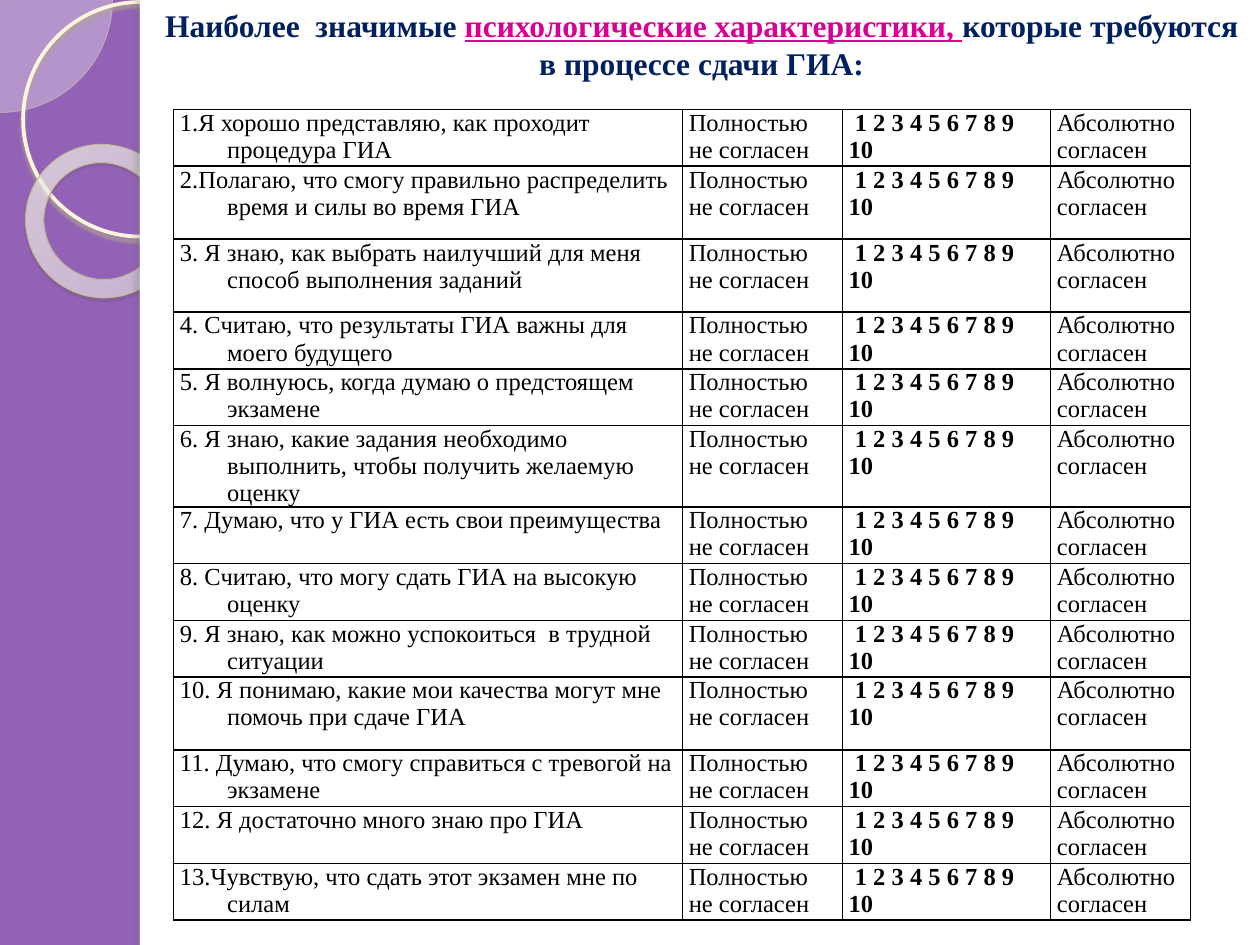
from lxml import etree
from pptx import Presentation
from pptx.dml.color import RGBColor
from pptx.enum import shapes, text
from pptx.oxml import parse_xml
from pptx.oxml.ns import qn
from pptx.util import Pt

NS = 'xmlns:a="http://schemas.openxmlformats.org/drawingml/2006/main"'


def paint(fill, colour):
    fill.solid()
    fill.fore_color.rgb = RGBColor.from_string(colour)


def add_part(kind, frame, fill=None, line=None, shadow=None):
    part = page.shapes.add_shape(kind, *map(Pt, frame))
    if fill:
        paint(part.fill, fill)
    else:
        part.fill.background()
    if line:
        paint(part.line.fill, line[0])
        part.line.width = Pt(line[1])
    else:
        part.line.fill.background()
    part.shadow.inherit = False
    if shadow:
        colour, alpha, blur, distance, angle = shadow
        part.element.spPr.find(qn("a:effectLst")).append(parse_xml(
            f'<a:outerShdw {NS} blurRad="{Pt(blur)}" dist="{Pt(distance)}" '
            f'dir="{angle * 60000}" algn="tl" rotWithShape="0"><a:srgbClr val="{colour}">'
            f'<a:alpha val="{alpha * 1000}"/></a:srgbClr></a:outerShdw>'))
    return part


deck = Presentation()
deck.slide_width, deck.slide_height = Pt(720), Pt(540)
page = deck.slides.add_slide(deck.slide_layouts[5])
paint(page.background.fill, "9262B7")
SHAPE = shapes.MSO_SHAPE

# Quarter disc in the corner
disc = add_part(SHAPE.PIE, (-64.3, -64.3, 128.6, 128.6), "FEFAF4", ("D3C39F", 0.25))
disc.adjustments[0], disc.adjustments[1] = 0, 54.02
tint = disc.element.spPr.find(qn("a:solidFill"))[0]
etree.SubElement(tint, qn("a:alpha")).set("val", "33000")

# Cream circle
add_part(SHAPE.OVAL, (13.2, 1.2, 134, 134), None, ("FFF5DE", 2.15),
         ("B0A68F", 85, 2, 2, 90))

# Translucent ring
ring = add_part(SHAPE.DONUT, (14.4, 82.8, 88.6, 87.1), "FFFCF6", ("C7B893", 0.58),
                ("5A5444", 35, 1, 1.2, 75))
ring.adjustments[0] = 0.12
ring.rotation = 38.6
stops = "".join(
    f'<a:gs pos="{place * 1000}"><a:srgbClr val="{colour}">'
    f'<a:alpha val="{alpha * 1000}"/></a:srgbClr></a:gs>'
    for place, colour, alpha in [(0, "FFFCF6", 70), (70, "FFFEFB", 55), (100, "F0D28E", 60)])
ring_properties = ring.element.spPr
ring_properties.replace(ring_properties.find(qn("a:solidFill")), parse_xml(
    f'<a:gradFill {NS}><a:gsLst>{stops}</a:gsLst><a:path path="circle">'
    '<a:fillToRect l="-408000" t="-50000" r="508000" b="150000"/></a:path></a:gradFill>'))

# White sheet and its shaded left edge
add_part(SHAPE.RECTANGLE, (80, 0, 640, 540), "FFFFFF")
add_part(SHAPE.RECTANGLE, (80, 0, 5.8, 540), "FFFFFF", None, ("736F63", 25, 3, 3, 180))

# Questionnaire
statements = [
    "1.Я хорошо представляю, как проходит процедура ГИА",
    "2.Полагаю, что смогу правильно распределить время и силы во время ГИА",
    "3. Я знаю, как выбрать наилучший для меня способ выполнения заданий",
    "4. Считаю, что результаты ГИА важны для моего будущего",
    "5. Я волнуюсь, когда думаю о предстоящем экзамене",
    "6. Я знаю, какие задания необходимо выполнить, чтобы получить желаемую оценку",
    "7. Думаю, что у ГИА есть свои преимущества",
    "8. Считаю, что могу сдать ГИА на высокую оценку",
    "9. Я знаю, как можно успокоиться  в трудной ситуации",
    "10. Я понимаю, какие мои качества могут мне помочь при сдаче ГИА",
    "11. Думаю, что смогу справиться с тревогой на экзамене",
    "12. Я достаточно много знаю про ГИА",
    "13.Чувствую, что сдать этот экзамен мне по силам",
]
answers = ["Полностью не согласен", " 1 2 3 4 5 6 7 8 9 10", "Абсолютно согласен"]
widths = [290.8, 91.4, 119, 80]
tall_rows = {1, 2, 5, 9}
cell_format = {"margin_left": Pt(3.6), "margin_right": Pt(3.6),
               "margin_top": 0, "margin_bottom": 0}

table = page.shapes.add_table(len(statements), len(widths), Pt(99.2), Pt(62.6),
                              Pt(sum(widths)), Pt(463)).table
table.first_row = table.horz_banding = False
for column, width in zip(table.columns, widths):
    column.width = Pt(width)
for number, statement in enumerate(statements):
    table.rows[number].height = Pt(41.7 if number in tall_rows else 32.4)
    for place, wording in enumerate([statement] + answers):
        cell = table.cell(number, place)
        for name, value in cell_format.items():
            setattr(cell, name, value)
        para = cell.text_frame.paragraphs[0]
        span = para.add_run()
        span.text = wording
        font_format = {"name": "Times New Roman", "size": Pt(14), "bold": place == 2}
        for name, value in font_format.items():
            setattr(span.font, name, value)
        paint(span.font.fill, "000000")
        if place == 0:
            indent = para._p.get_or_add_pPr()
            indent.set("marL", str(Pt(27)))
            indent.set("indent", str(Pt(-27)))
            indent.append(parse_xml(
                f'<a:tabLst {NS}><a:tab pos="{Pt(36)}" algn="l"/></a:tabLst>'))
        cell.fill.background()
        for order, side in enumerate(["lnL", "lnR", "lnT", "lnB"]):
            cell._tc.get_or_add_tcPr().insert(order, parse_xml(
                f'<a:{side} {NS} w="{Pt(1)}"><a:solidFill><a:srgbClr val="000000"/>'
                f'</a:solidFill></a:{side}>'))

# Title, in front of everything
title = page.shapes.title
title_frame = {"left": Pt(82), "top": 0, "width": Pt(638), "height": Pt(94.3)}
for name, value in title_frame.items():
    setattr(title, name, value)
box = title.text_frame
box_format = {"word_wrap": True, "auto_size": text.MSO_AUTO_SIZE.NONE,
              "vertical_anchor": text.MSO_ANCHOR.TOP}
for name, value in box_format.items():
    setattr(box, name, value)
para = box.paragraphs[0]
para.alignment = text.PP_ALIGN.CENTER
for wording, colour, underline in [
    ("Наиболее  значимые ", "002060", False),
    ("психологические характеристики,", "D60093", True),
    (" ", "FF0066", True),
    ("которые требуются в процессе сдачи ГИА:", "002060", False),
]:
    span = para.add_run()
    span.text = wording
    font_format = {"name": "Times New Roman", "size": Pt(18), "bold": True,
                   "underline": underline}
    for name, value in font_format.items():
        setattr(span.font, name, value)
    paint(span.font.fill, colour)
page.shapes._spTree.append(title.element)

deck.save("out.pptx")
